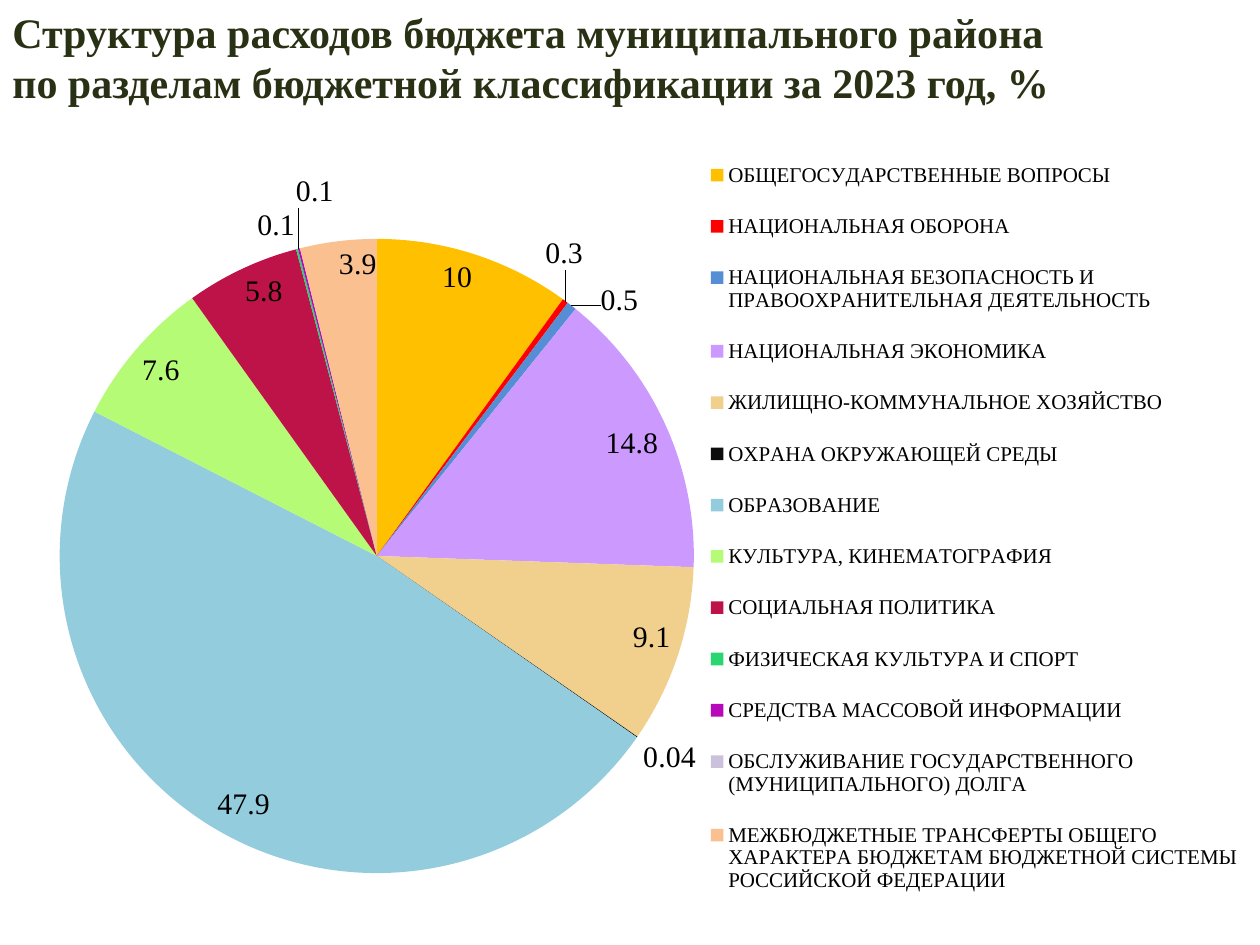
from pptx import Presentation
from pptx.chart.data import CategoryChartData as ChartData
from pptx.dml.color import RGBColor
from pptx.enum.chart import XL_CHART_TYPE as Kind
from pptx.enum.chart import XL_LABEL_POSITION as Spot
from pptx.enum.chart import XL_LEGEND_POSITION as Side
from pptx.enum.text import MSO_AUTO_SIZE as Fit
from pptx.oxml import parse_xml
from pptx.oxml.ns import nsdecls, qn
from pptx.util import Inches, Pt

SERIF = "Times New Roman"
COLORS = {"title": "283114", "text": "000000"}
TITLE = [
    "Структура расходов бюджета муниципального района",
    "по разделам бюджетной классификации за 2023 год, %",
]
# Section, share in %, slice colour
PARTS = [
    ("ОБЩЕГОСУДАРСТВЕННЫЕ ВОПРОСЫ", 10, "FFC000"),
    ("НАЦИОНАЛЬНАЯ ОБОРОНА", 0.3, "FF0000"),
    ("НАЦИОНАЛЬНАЯ БЕЗОПАСНОСТЬ И ПРАВООХРАНИТЕЛЬНАЯ ДЕЯТЕЛЬНОСТЬ", 0.5, "558ED5"),
    ("НАЦИОНАЛЬНАЯ ЭКОНОМИКА", 14.8, "CC99FF"),
    ("ЖИЛИЩНО-КОММУНАЛЬНОЕ ХОЗЯЙСТВО", 9.1, "F1D08D"),
    ("ОХРАНА ОКРУЖАЮЩЕЙ СРЕДЫ", 0.04, "0D0D0D"),
    ("ОБРАЗОВАНИЕ", 47.9, "93CDDD"),
    ("КУЛЬТУРА, КИНЕМАТОГРАФИЯ", 7.6, "B5FB75"),
    ("СОЦИАЛЬНАЯ ПОЛИТИКА", 5.8, "BD1348"),
    ("ФИЗИЧЕСКАЯ КУЛЬТУРА И СПОРТ", 0.1, "2AD670"),
    ("СРЕДСТВА МАССОВОЙ ИНФОРМАЦИИ", 0.1, "B808BC"),
    ("ОБСЛУЖИВАНИЕ ГОСУДАРСТВЕННОГО (МУНИЦИПАЛЬНОГО) ДОЛГА", None, "CCC1DA"),
    ("", None, "00B050"),
    ("МЕЖБЮДЖЕТНЫЕ ТРАНСФЕРТЫ ОБЩЕГО ХАРАКТЕРА БЮДЖЕТАМ "
     "БЮДЖЕТНОЙ СИСТЕМЫ РОССИЙСКОЙ ФЕДЕРАЦИИ", 3.9, "FAC090"),
]
# Label shifts as shares of the chart size
SHIFTS = {1: (-0.02, -0.03), 2: (0.02, 0.02), 10: (0.03, -0.04)}


def style(font, size, color, name=SERIF):
    font.size, font.name = Pt(size), name
    font.color.rgb = RGBColor.from_string(COLORS[color])


def layout(**vals):
    """Manual layout; tags are given in schema order."""
    tags = "".join(f'<c:{tag} val="{val}"/>' for tag, val in vals.items())
    return parse_xml(f'<c:layout {nsdecls("c")}><c:manualLayout>{tags}'
                     '</c:manualLayout></c:layout>')


def place(node, spot, item):
    for old in node.findall(qn("c:layout")):
        node.remove(old)
    node.insert(spot, item)


deck = Presentation()
deck.slide_width, deck.slide_height = Inches(10), Inches(7.5)
slide = deck.slides.add_slide(deck.slide_layouts[6])

# Title
frame = slide.shapes.add_textbox(0, 0, Inches(10), Inches(0.91)).text_frame
frame.word_wrap = True
frame.auto_size = Fit.SHAPE_TO_FIT_TEXT
for i, line in enumerate(TITLE):
    para = frame.add_paragraph() if i else frame.paragraphs[0]
    run = para.add_run()
    run.text = line
    run.font.bold = True
    style(run.font, 24, "title")

# Pie chart
data = ChartData()
data.categories = [name for name, _, _ in PARTS]
data.add_series("Series 1", [share for _, share, _ in PARTS])
chart = slide.shapes.add_chart(
    Kind.PIE, Inches(0.28), Inches(0.94), Inches(9.68), Inches(6.56), data).chart
chart.has_title = False
style(chart.font, 18, "text", "Calibri")
plot = chart.plots[0]
plot.vary_by_categories = True
place(plot._element.getparent(), 0, layout(
    layoutTarget="inner", xMode="edge", yMode="edge", x=0.02, y=0.123, w=0.52, h=0.813))

# Slices and labels: small shares stand outside
pie = plot.series[0]
labels = pie.data_labels
labels.show_value = True
labels.position = Spot.INSIDE_END
style(labels.font, 17, "text")
for i, (_, share, color) in enumerate(PARTS):
    point = pie.points[i]
    point.format.fill.solid()
    point.format.fill.fore_color.rgb = RGBColor.from_string(color)
    if share and share < 1:
        label = point.data_label
        style(label.font, 17, "text")
        label.position = Spot.OUTSIDE_END
        if i in SHIFTS:
            x, y = SHIFTS[i]
            place(label._dLbl, 1, layout(x=x, y=y))

# Legend without the unnamed section
chart.has_legend = True
legend = chart.legend
legend.position = Side.LEFT
legend.include_in_layout = False
style(legend.font, 12, "text")
node = legend._element
place(node, 1, layout(xMode="edge", yMode="edge", x=0.54, y=0.02, w=0.46, h=0.95))
hidden = [i for i, part in enumerate(PARTS) if not part[0]]
for i in hidden:
    node.insert(1, parse_xml(f'<c:legendEntry {nsdecls("c")}><c:idx val="{i}"/>'
                             '<c:delete val="1"/></c:legendEntry>'))

deck.save("out.pptx")
